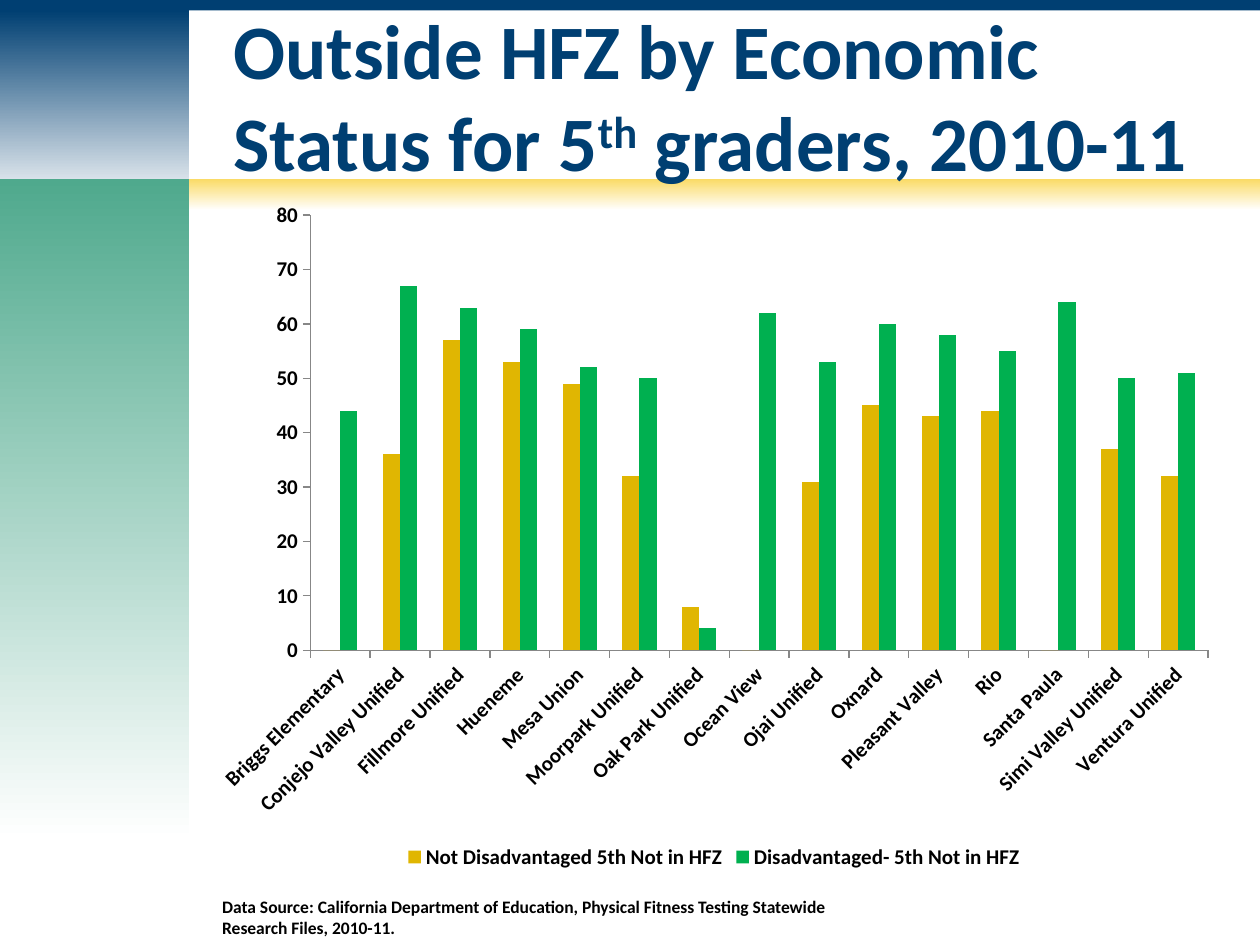
from pptx import Presentation
from pptx.chart.data import CategoryChartData
from pptx.dml.color import RGBColor
from pptx.enum.chart import XL_CHART_TYPE, XL_LEGEND_POSITION, XL_TICK_MARK
from pptx.enum.shapes import MSO_SHAPE
from pptx.enum.text import MSO_ANCHOR, MSO_AUTO_SIZE, PP_ALIGN
from pptx.util import Cm, Pt

RECTANGLE = MSO_SHAPE.RECTANGLE
CLUSTERED = XL_CHART_TYPE.COLUMN_CLUSTERED
BOTTOM = XL_LEGEND_POSITION.BOTTOM
OUTSIDE, NO_TICK = XL_TICK_MARK.OUTSIDE, XL_TICK_MARK.NONE
MIDDLE, LEFT, NO_AUTOFIT = MSO_ANCHOR.MIDDLE, PP_ALIGN.LEFT, MSO_AUTO_SIZE.NONE

FONT = "Calibri"
NAVY, YELLOW, TEAL, WHITE, BLACK = "003F72", "FADA63", "4FA98D", "FFFFFF", "000000"
GOLD, GREEN, GRAY = "E0B602", "00B050", "878787"

NOT_DISADVANTAGED = "Not Disadvantaged 5th Not in HFZ"
DISADVANTAGED = "Disadvantaged- 5th Not in HFZ"
SERIES_COLORS = {NOT_DISADVANTAGED: GOLD, DISADVANTAGED: GREEN}
DISTRICTS = [
    ("Briggs Elementary", 0, 44),
    ("Conjejo Valley Unified", 36, 67),
    ("Fillmore Unified", 57, 63),
    ("Hueneme", 53, 59),
    ("Mesa Union", 49, 52),
    ("Moorpark Unified", 32, 50),
    ("Oak Park Unified", 8, 4),
    ("Ocean View", 0, 62),
    ("Ojai Unified", 31, 53),
    ("Oxnard", 45, 60),
    ("Pleasant Valley", 43, 58),
    ("Rio", 44, 55),
    ("Santa Paula", 0, 64),
    ("Simi Valley Unified", 37, 50),
    ("Ventura Unified", 32, 51),
]


def color(value):
    return RGBColor.from_string(value)


def box(left, top, width, height):
    return Cm(left), Cm(top), Cm(width), Cm(height)


def style_font(font, size, value):
    font.name, font.size, font.bold = FONT, Pt(size), True
    font.color.rgb = color(value)


def add_run(paragraph, text, size, value):
    run = paragraph.add_run()
    run.text = text
    style_font(run.font, size, value)
    return run


def add_band(slide, area, start, end=None):
    shape = slide.shapes.add_shape(RECTANGLE, *area)
    shape.shadow.inherit = False
    shape.line.fill.background()
    if end is None:
        shape.fill.solid()
        shape.fill.fore_color.rgb = color(start)
        return
    shape.fill.gradient()
    shape.fill.gradient_angle = 270
    for stop, value in zip(shape.fill.gradient_stops, (start, end)):
        stop.color.rgb = color(value)


def add_frame(slide, area):
    left, top, width, height = area
    side, bar, header = Cm(3.81), Cm(0.21), Cm(3.6)
    add_band(slide, (left, top + bar, side, Cm(4.01)), NAVY, WHITE)
    add_band(slide, (left + Cm(1.27), top + header, width - Cm(1.27), Cm(0.64)), YELLOW, WHITE)
    add_band(slide, (left, top, width, bar), NAVY)
    add_band(slide, (left, top + header, side, Cm(13.34)), TEAL, WHITE)


def place_title(slide, area):
    title = slide.shapes.title
    title.left, title.top, title.width, title.height = area
    title.element.getparent().append(title.element)
    frame = title.text_frame
    frame.word_wrap, frame.auto_size = True, NO_AUTOFIT
    frame.vertical_anchor = MIDDLE
    paragraph = frame.paragraphs[0]
    paragraph.alignment = LEFT
    add_run(paragraph, "Outside HFZ by Economic Status for 5", 44, NAVY)
    ordinal = add_run(paragraph, "th", 44, NAVY)
    ordinal.font._element.set("baseline", "30000")
    add_run(paragraph, " graders, 2010-11", 44, NAVY)


def add_source_note(slide, area):
    frame = slide.shapes.add_textbox(*area).text_frame
    frame.word_wrap = True
    add_run(
        frame.paragraphs[0],
        "Data Source: California Department of Education, "
        "Physical Fitness Testing Statewide Research Files, 2010-11.",
        10,
        BLACK,
    )


def add_status_chart(slide, area):
    names, *columns = zip(*DISTRICTS)
    data = CategoryChartData()
    data.categories = names
    for name, values in zip(SERIES_COLORS, columns):
        data.add_series(name, values)
    chart = slide.shapes.add_chart(CLUSTERED, *area, data).chart
    style_font(chart.font, 12, BLACK)
    chart.has_title = False
    chart.has_legend = True
    chart.legend.position = BOTTOM
    chart.legend.include_in_layout = False
    for axis in (chart.category_axis, chart.value_axis):
        axis.has_major_gridlines = False
        axis.major_tick_mark, axis.minor_tick_mark = OUTSIDE, NO_TICK
        axis.format.line.color.rgb = color(GRAY)
    chart.value_axis.minimum_scale = 0
    chart.value_axis.maximum_scale = 80
    chart.value_axis.major_unit = 10
    plot = chart.plots[0]
    plot.gap_width, plot.overlap = 150, 0
    plot.vary_by_categories = False
    for series in plot.series:
        series.format.fill.solid()
        series.format.fill.fore_color.rgb = color(SERIES_COLORS[series.name])


def main():
    presentation = Presentation()
    presentation.slide_width, presentation.slide_height = Cm(25.4), Cm(19.05)
    slide = presentation.slides.add_slide(presentation.slide_layouts[5])
    add_frame(slide, box(0, 0, 25.4, 19.05))
    place_title(slide, box(4.45, 0.42, 20.75, 2.97))
    add_source_note(slide, box(4.23, 17.93, 12.9, 1.12))
    add_status_chart(slide, box(4.02, 3.81, 20.75, 13.82))
    presentation.save("out.pptx")


if __name__ == "__main__":
    main()
